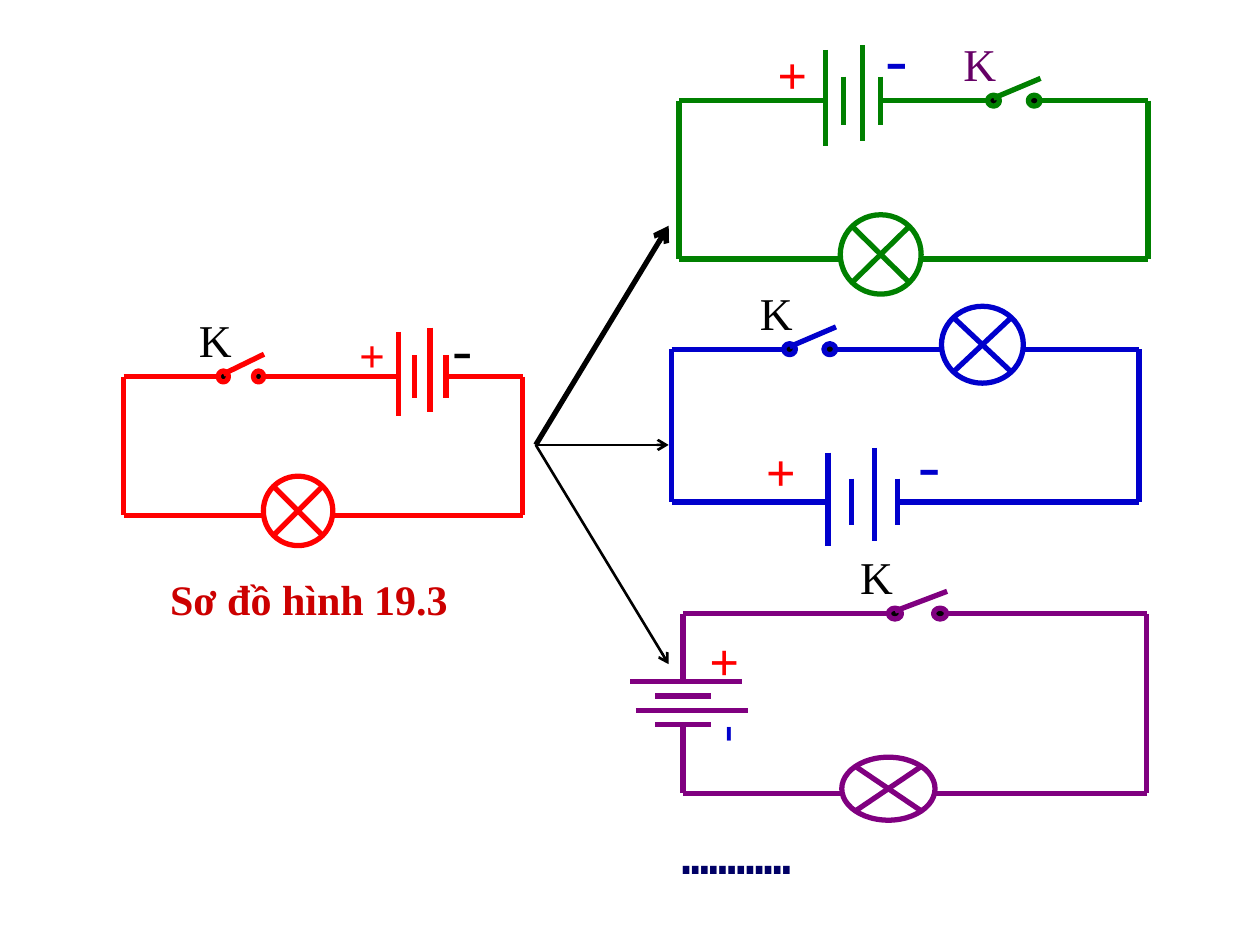
from dataclasses import dataclass
from lxml.etree import SubElement
from pptx import Presentation
from pptx.dml.color import RGBColor
from pptx.enum.shapes import MSO_CONNECTOR, MSO_SHAPE
from pptx.enum.text import MSO_AUTO_SIZE
from pptx.oxml.ns import qn
from pptx.util import Cm, Pt

COLOURS = {
    "red": "FF0000", "green": "008000", "blue": "0000CC", "purple": "800080",
    "black": "000000", "plum": "660066", "crimson": "CC0000", "navy": "000066",
}
SERIF = "Times New Roman"
MONO = "DejaVu Sans Mono"


@dataclass
class Box:
    left: float
    top: float
    width: float
    height: float

    def inner(self, left, top, width, height):
        return Box(self.left + left, self.top + top, width, height)

    def lengths(self):
        return [Cm(value) for value in (self.left, self.top, self.width, self.height)]


@dataclass
class Lamp:
    side: str
    start: float
    width: float
    height: float


@dataclass
class Switch:
    start: float
    pitch: float
    label: str = "black"


@dataclass
class Battery:
    side: str
    start: float
    pitch: float
    length: float
    plus: tuple
    minus: tuple
    sizes: tuple
    label: str = "blue"


def rgb(colour):
    return RGBColor.from_string(COLOURS[colour])


def add_line(page, box, colour, start, end, weight=3, arrow=False):
    line = page.shapes.add_connector(
        MSO_CONNECTOR.STRAIGHT, Cm(box.left + start[0]), Cm(box.top + start[1]),
        Cm(box.left + end[0]), Cm(box.top + end[1]))
    line.line.color.rgb = rgb(colour)
    line.line.width = Pt(weight)
    properties = line._element.spPr
    if arrow:
        SubElement(properties.find(qn("a:ln")), qn("a:tailEnd"), type="arrow")
    SubElement(properties, qn("a:effectLst"))


def add_outline(page, box, colour, preset, fill=None):
    shape = page.shapes.add_shape(preset, *box.lengths())
    shape.shadow.inherit = False
    shape.line.color.rgb = rgb(colour)
    shape.line.width = Pt(3)
    if fill:
        shape.fill.solid()
        shape.fill.fore_color.rgb = rgb(fill)
    else:
        shape.fill.background()


def add_label(page, box, text, size, colour, bold=False, font=SERIF, wrap=False, turn=0):
    label = page.shapes.add_textbox(*box.lengths())
    label.rotation = turn
    frame = label.text_frame
    frame.word_wrap = wrap
    frame.auto_size = MSO_AUTO_SIZE.SHAPE_TO_FIT_TEXT
    span = frame.paragraphs[0].add_run()
    span.text = text
    span.font.name = font
    span.font.size = Pt(size)
    span.font.bold = bold
    span.font.color.rgb = rgb(colour)


def on_side(box, side, along, across=0):
    return {
        "top": (along, across),
        "bottom": (along, box.height + across),
        "left": (across, along),
        "right": (box.width + across, along),
    }[side]


def add_wires(page, box, colour, gaps):
    lengths = {"top": box.width, "bottom": box.width,
               "left": box.height, "right": box.height}
    for side, length in lengths.items():
        cuts = sorted(gap for where, gap in gaps if where == side)
        starts = [0] + [end for _, end in cuts]
        ends = [start for start, _ in cuts] + [length]
        for start, end in zip(starts, ends):
            add_line(page, box, colour, on_side(box, side, start), on_side(box, side, end))


def add_lamp(page, box, colour, lamp):
    left, middle = on_side(box, lamp.side, lamp.start, -0.09)
    bulb = box.inner(left, middle - lamp.height / 2, lamp.width, lamp.height)
    add_outline(page, bulb, colour, MSO_SHAPE.FLOWCHART_SUMMING_JUNCTION)


def add_switch(page, box, colour, switch):
    width, height = 0.29 * switch.pitch, 0.22
    for left in (switch.start, switch.start + switch.pitch):
        dot = box.inner(left, -height / 2, width, height)
        add_outline(page, dot, colour, MSO_SHAPE.OVAL, "black")
    add_line(page, box, colour, (switch.start + width / 2, -0.05),
             (switch.start + 1.3 * switch.pitch, -0.45))
    place = box.inner(switch.start - 0.9 * switch.pitch, -1.42, 1.19, 1.37)
    add_label(page, place, "K", 26, switch.label)


def add_battery(page, box, colour, battery):
    lying = battery.side == "left"
    shifts = [-0.03, 0, -0.08, 0]
    for index, shift in enumerate(shifts):
        half = battery.length / (4 if index % 2 else 2)
        centre = battery.length * (-shift if lying else shift)
        along = battery.start + index * battery.pitch
        add_line(page, box, colour, on_side(box, battery.side, along, centre - half),
                 on_side(box, battery.side, along, centre + half))
    left, top = on_side(box, battery.side, battery.start)
    signs = zip("+-", (battery.plus, battery.minus), battery.sizes, ("red", battery.label))
    for text, (across, down), size, hue in signs:
        height = size * (0.068 if lying else 0.055)
        place = box.inner(left + across, top + down, 1.12, height)
        add_label(page, place, text, size, hue, bold=text == "+", turn=90 if lying else 0)


def add_circuit(page, box, colour, lamp, switch, battery):
    gaps = [
        (lamp.side, (lamp.start, lamp.start + lamp.width)),
        ("top", (switch.start, switch.start + switch.pitch)),
        (battery.side, (battery.start, battery.start + 3 * battery.pitch)),
    ]
    add_wires(page, box, colour, gaps)
    add_battery(page, box, colour, battery)
    add_lamp(page, box, colour, lamp)
    add_switch(page, box, colour, switch)


def add_arrows(page, box):
    middle = box.height / 2
    for down, weight in ((0, 3), (middle, 1.5), (box.height, 1.5)):
        add_line(page, box, "black", (0, middle), (box.width, down), weight, True)


CIRCUITS = [
    (Box(13.77, 12.37, 9.35, 3.62), "purple", Lamp("bottom", 3.2, 1.88, 1.27),
     Switch(4.14, 0.91),
     Battery("left", 1.37, 0.29, 2.26, (0.08, -1.37), (0.28, 0.18), (30, 30))),
    (Box(13.54, 7.04, 9.42, 3.08), "blue", Lamp("top", 5.44, 1.65, 1.55),
     Switch(2.26, 0.81),
     Battery("bottom", 3.15, 0.47, 1.88, (-1.5, -1.4), (1.57, -1.73), (30, 38))),
    (Box(13.69, 2.03, 9.45, 3.19), "green", Lamp("bottom", 3.25, 1.63, 1.6),
     Switch(6.22, 0.82, "plum"),
     Battery("top", 2.95, 0.37, 1.93, (-1.22, -1.3), (0.96, -1.83), (30, 38))),
    (Box(2.49, 7.59, 8.05, 2.8), "red", Lamp("bottom", 2.82, 1.4, 1.4),
     Switch(1.91, 0.71),
     Battery("top", 5.54, 0.32, 1.7, (-1.04, -1.12), (0.84, -1.45), (26, 34), "black")),
]


def main():
    deck = Presentation()
    deck.slide_width = Cm(25.4)
    deck.slide_height = Cm(19.05)
    page = deck.slides.add_slide(deck.slide_layouts[6])
    for circuit in CIRCUITS:
        add_circuit(page, *circuit)
    add_label(page, Box(3.18, 11.43, 6.15, 1.3), "Sơ đồ hình 19.3", 24, "crimson",
              bold=True, wrap=True)
    add_arrows(page, Box(10.8, 4.55, 2.68, 8.84))
    add_label(page, Box(13.49, 16.59, 7.95, 1.37), "…………", 26, "navy",
              bold=True, font=MONO, wrap=True)
    deck.save("out.pptx")


if __name__ == "__main__":
    main()
